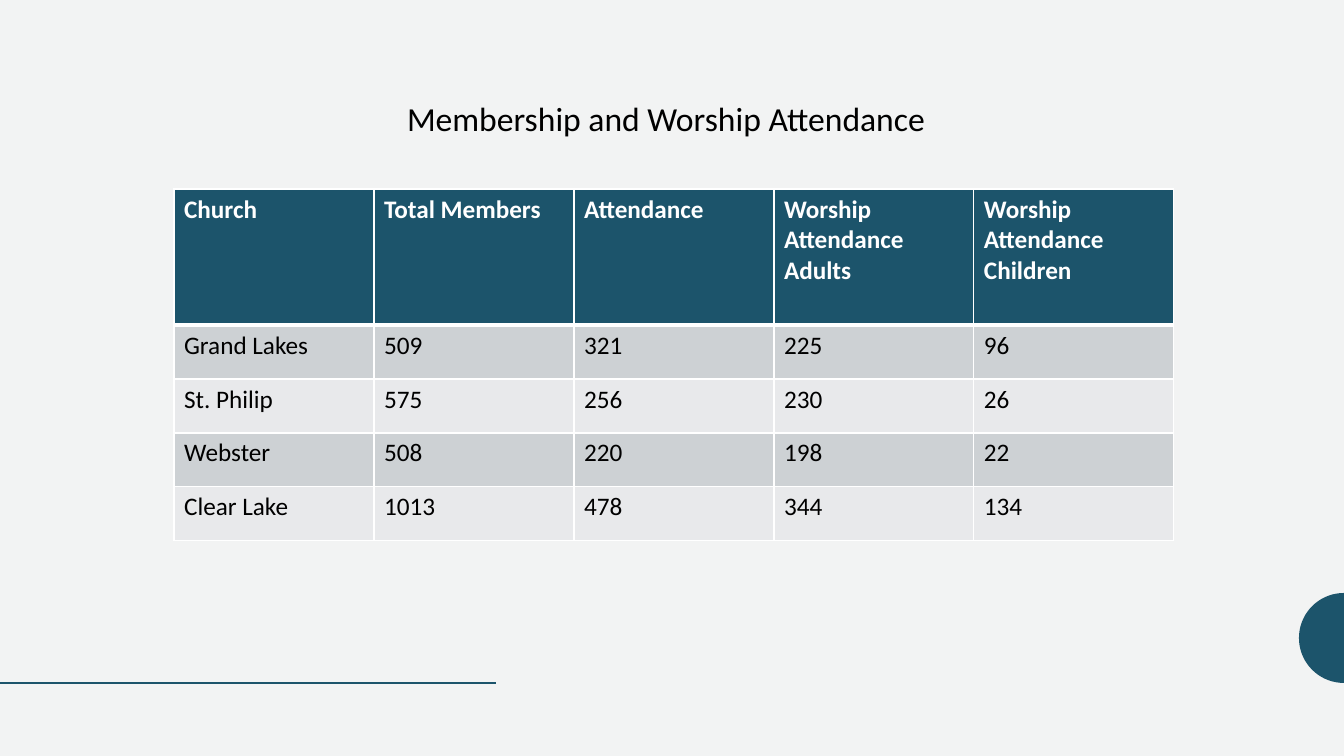
import math
import pptx
import pptx.util
import pptx.dml.color
import pptx.enum.shapes
import pptx.enum.text
import pptx.oxml
import pptx.oxml.ns
import lxml.etree

# Content
TITLE = "Membership and Worship Attendance"
ROWS = [
    ("Church", "Total Members", "Attendance",
     "Worship Attendance Adults", "Worship Attendance Children"),
    ("Grand Lakes", "509", "321", "225", "96"),
    ("St. Philip", "575", "256", "230", "26"),
    ("Webster", "508", "220", "198", "22"),
    ("Clear Lake", "1013", "478", "344", "134"),
]

# Style and layout, in px
HUES = {"back": "F2F3F3", "teal": "1C546B", "dark": "CDD1D4",
        "pale": "E8E9EB", "white": "FFFFFF", "black": "000000"}
FONT = "Calibri"
WIDE, HIGH = 1344, 756
LEFT, TOP, COL, HEAD, ROW = 174, 189, 200, 136, 54
BASE, RULE, RAD = 683, 496, 45
UNIT = 914400 / 100.8


def px(num):
    return pptx.util.Emu(round(num * UNIT))


def hue(name):
    return pptx.dml.color.RGBColor.from_string(HUES[name])


def paint(fill, name):
    fill.solid()
    fill.fore_color.rgb = hue(name)


def write(frame, text, size=18, color="black", bold=False, align="LEFT"):
    para = frame.paragraphs[0]
    para.alignment = getattr(pptx.enum.text.PP_ALIGN, align)
    run = para.add_run()
    run.text = text
    run.font.name = FONT
    run.font.size = pptx.util.Pt(size)
    run.font.bold = bold
    run.font.color.rgb = hue(color)


def border(cell, side, width):
    props = cell._tc.get_or_add_tcPr()
    line = lxml.etree.SubElement(
        props, pptx.oxml.ns.qn("a:ln" + side), w=str(pptx.util.Pt(width)))
    fill = lxml.etree.SubElement(line, pptx.oxml.ns.qn("a:solidFill"))
    lxml.etree.SubElement(
        fill, pptx.oxml.ns.qn("a:srgbClr"), val=HUES["white"])


deck = pptx.Presentation()
deck.slide_width, deck.slide_height = px(WIDE), px(HIGH)
slide = deck.slides.add_slide(deck.slide_layouts[6])
paint(slide.background.fill, "back")
shapes = slide.shapes

# Half disc at the right edge
arc = []
for deg in range(90, 271, 5):
    turn = math.radians(deg)
    arc.append((px(WIDE + RAD * math.cos(turn)),
                px(BASE - RAD + RAD * math.sin(turn))))
form = shapes.build_freeform(*arc[0], scale=1.0)
form.add_line_segments(arc[1:], close=True)
disc = form.convert_to_shape()
disc.shadow.inherit = False
paint(disc.fill, "teal")
disc.line.fill.background()

# Bottom rule
rule = shapes.add_connector(
    pptx.enum.shapes.MSO_CONNECTOR.STRAIGHT, 0, px(BASE), px(RULE), px(BASE))
rule.line.color.rgb = hue("teal")
rule.line.width = pptx.util.Pt(2)
lxml.etree.SubElement(rule._element.spPr, pptx.oxml.ns.qn("a:effectLst"))

# Attendance table
count = len(ROWS[0])
tall = HEAD + ROW * (len(ROWS) - 1)
grid = shapes.add_table(len(ROWS), count, px(LEFT), px(TOP),
                        px(COL * count), px(tall)).table
for col in grid.columns:
    col.width = px(COL)
for r, row in enumerate(ROWS):
    first = r == 0
    grid.rows[r].height = px(HEAD if first else ROW)
    shade = "teal" if first else ("pale", "dark")[r % 2]
    for c, text in enumerate(row):
        cell = grid.cell(r, c)
        for side in "LRTB":
            thick = (first and side == "B") or (r == 1 and side == "T")
            border(cell, side, 3 if thick else 1)
        paint(cell.fill, shade)
        write(cell.text_frame, text, bold=first,
              color="white" if first else "black")

# Title
box = shapes.add_textbox(px(389), px(93), px(554), px(50))
box.text_frame.word_wrap = False
write(box.text_frame, TITLE, size=24, align="CENTER")

deck.save("out.pptx")
